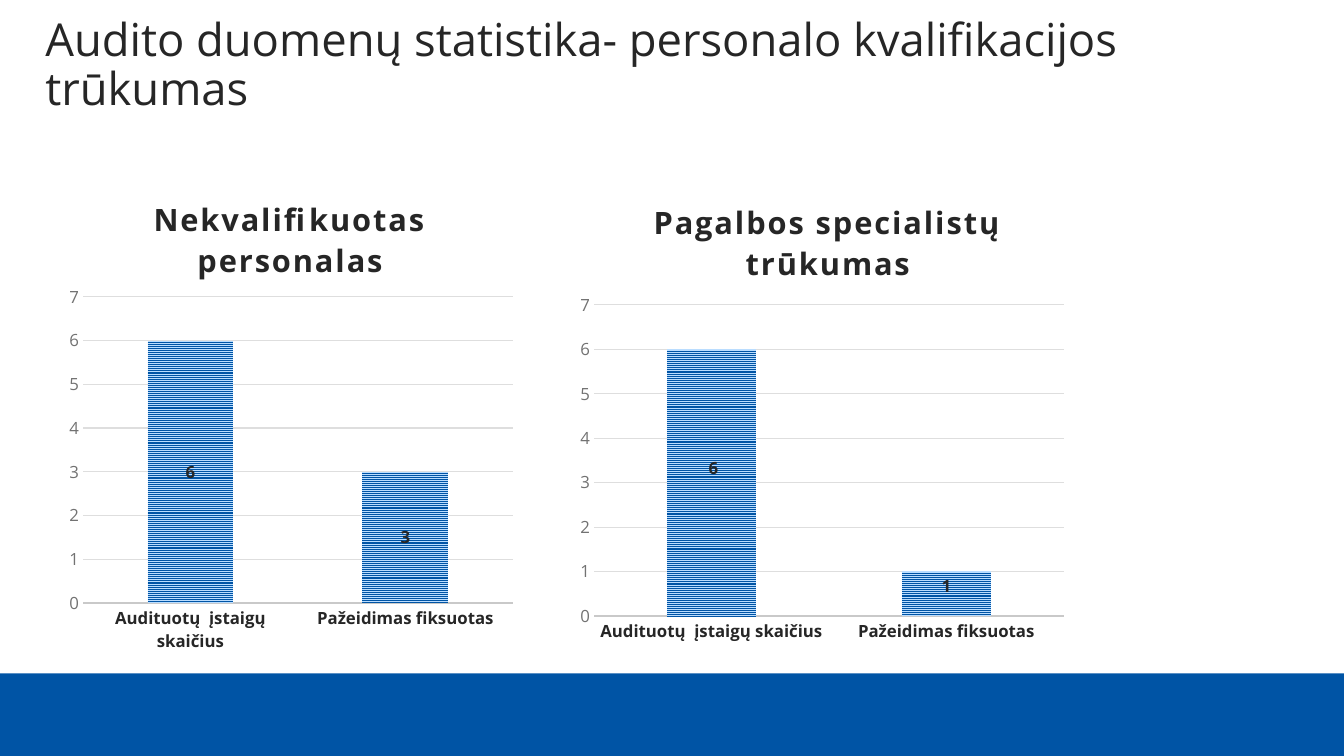
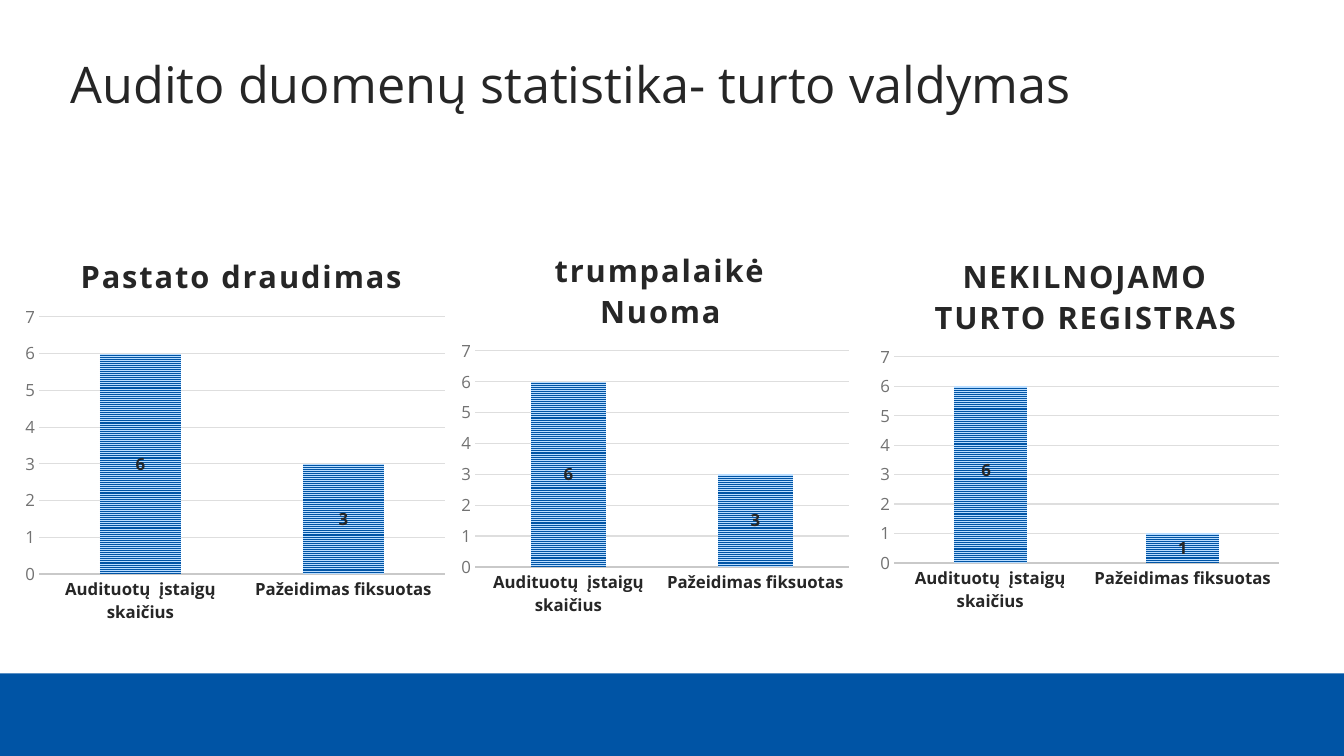
from dataclasses import dataclass

from lxml import etree
from pptx import Presentation
from pptx.chart.data import CategoryChartData
from pptx.dml.color import RGBColor
from pptx.enum.chart import XL_CHART_TYPE, XL_LABEL_POSITION, XL_TICK_MARK
from pptx.enum.dml import MSO_PATTERN
from pptx.enum.shapes import MSO_SHAPE
from pptx.enum.text import MSO_ANCHOR, PP_ALIGN
from pptx.oxml.ns import qn
from pptx.util import Pt

STACKED = XL_CHART_TYPE.COLUMN_STACKED
CLUSTERED = XL_CHART_TYPE.COLUMN_CLUSTERED
NO_TICK = XL_TICK_MARK.NONE
CENTER_LABEL = XL_LABEL_POSITION.CENTER
STRIPES = MSO_PATTERN.NARROW_HORIZONTAL


@dataclass(frozen=True)
class Theme:
    font: str = "Open Sans"
    blue: RGBColor = RGBColor.from_string("0054A5")
    pale_blue: RGBColor = RGBColor.from_string("BADDFF")
    ink: RGBColor = RGBColor.from_string("262626")
    gray: RGBColor = RGBColor.from_string("727272")
    axis_line: RGBColor = RGBColor.from_string("C9C9C9")
    grid_line: RGBColor = RGBColor.from_string("DEDEDE")
    chart_title_size: float = 22
    chart_title_spacing: float = 1.5
    label_size: float = 12
    base_size: float = 10


THEME = Theme()
SLIDE_SIZE = (960, 540)
BAND = (0, 481, 960, 59)
CATEGORIES = ["Audituotų  įstaigų skaičius", "Pažeidimas fiksuotas"]
GAP_AND_OVERLAP = {STACKED: (150, 100), CLUSTERED: (164, -22)}

# Boxes are (left, top, width, height) on the slide, in points.
# Label shifts are (right, down) from the middle of a column, by point index.
SLIDES = [
    {
        "title": "Audito duomenų statistika- personalo kvalifikacijos trūkumas",
        "title_size": 32.4,
        "title_box": (25.2, 21.6, 903.6, 64.1),
        "charts": [
            {"title": "Nekvalifikuotas personalas", "type": STACKED, "values": (6, 3),
             "box": (43.2, 113.8, 329.8, 359.3), "plot": (59.3, 212.1, 307.1, 218.6),
             "title_at": (105.7, 135.7)},
            {"title": "Pagalbos specialistų trūkumas", "type": CLUSTERED, "values": (6, 1),
             "box": (406.8, 120.2, 360, 345.6), "plot": (424.3, 217.9, 335.7, 222.1),
             "title_at": (462.9, 137.9), "label_shifts": {0: (1.4, -10), 1: (0, -5.7)}},
        ],
    },
    {
        "title": "Audito duomenų statistika- turto valdymas",
        "title_size": 36,
        "title_box": (43.2, 21.6, 871.2, 64.1),
        "charts": [
            {"title": "Pastato draudimas", "type": STACKED, "values": (6, 3),
             "box": (12.2, 160.6, 311.8, 291.6), "plot": (27.9, 226.4, 290, 183.6),
             "title_at": (53.6, 176.4)},
            {"title": "trumpalaikė Nuoma", "type": STACKED, "values": (6, 3),
             "box": (324, 155.5, 288.7, 291.6), "plot": (339.3, 250.7, 267.1, 154.3),
             "title_at": (392.1, 172)},
            {"title": "NEKILNOJAMO TURTO REGISTRAS", "type": CLUSTERED, "values": (6, 1),
             "box": (622.8, 160.6, 296.6, 283), "plot": (638.6, 255, 275, 147.1),
             "title_at": (663.6, 176.4), "label_shifts": {0: (-2.9, -2.9)}},
        ],
    },
]


def points(lengths):
    return [Pt(length) for length in lengths]


def style_font(font, size, color=THEME.ink, bold=False):
    font.name = THEME.font
    font.size = Pt(size)
    font.bold = bold
    font.color.rgb = color


def set_layout(parent, index, **settings):
    """Give a chart part a manual layout, as its child at the given index."""
    for old in parent.findall(qn("c:layout")):
        parent.remove(old)
    layout = etree.Element(qn("c:layout"))
    manual = etree.SubElement(layout, qn("c:manualLayout"))
    for name, value in settings.items():
        etree.SubElement(manual, qn(f"c:{name}")).set("val", str(value))
    parent.insert(index, layout)


def fractions(box, frame):
    """Express a slide position or box as shares of the chart frame."""
    left, top, width, height = frame
    shares = [(box[0] - left) / width, (box[1] - top) / height]
    if len(box) == 4:
        shares += [box[2] / width, box[3] / height]
    return dict(zip("xywh", (round(share, 4) for share in shares)))


def style_chart_title(chart, content):
    title = chart.chart_title
    paragraph = title.text_frame.paragraphs[0]
    paragraph.alignment = PP_ALIGN.CENTER
    run = paragraph.add_run()
    run.text = content["title"]
    style_font(run.font, THEME.chart_title_size, bold=True)
    run.font._element.set("spc", str(int(THEME.chart_title_spacing * 100)))
    title.include_in_layout = False
    set_layout(title._element, 1, xMode="edge", yMode="edge",
               **fractions(content["title_at"], content["box"]))


def style_axes(chart):
    for axis in (chart.category_axis, chart.value_axis):
        axis.major_tick_mark = axis.minor_tick_mark = NO_TICK
    category_axis, value_axis = chart.category_axis, chart.value_axis
    style_font(category_axis.tick_labels.font, THEME.label_size, bold=True)
    category_axis.format.line.color.rgb = THEME.axis_line
    category_axis.format.line.width = Pt(1.5)
    style_font(value_axis.tick_labels.font, THEME.label_size, THEME.gray)
    value_axis.minimum_scale, value_axis.maximum_scale, value_axis.major_unit = 0, 7, 1
    value_axis.format.line.fill.background()
    grid_line = value_axis.major_gridlines.format.line
    grid_line.color.rgb = THEME.grid_line
    grid_line.width = Pt(0.75)


def style_columns(chart, content):
    plot = chart.plots[0]
    plot.vary_by_categories = False
    plot.gap_width, plot.overlap = GAP_AND_OVERLAP[content["type"]]
    series = plot.series[0]
    fill = series.format.fill
    fill.patterned()
    fill.pattern = STRIPES
    fill.fore_color.rgb = THEME.blue
    fill.back_color.rgb = THEME.pale_blue
    labels = series.data_labels
    labels.show_value = True
    labels.position = CENTER_LABEL
    style_font(labels.font, THEME.label_size, bold=True)
    for index, (right, down) in content.get("label_shifts", {}).items():
        label = series.points[index].data_label
        label.position = CENTER_LABEL
        style_font(label.font, THEME.label_size, bold=True)
        width, height = content["box"][2:]
        set_layout(labels._element.findall(qn("c:dLbl"))[-1], 1,
                   x=round(right / width, 4), y=round(down / height, 4))


def add_column_chart(slide, content):
    data = CategoryChartData()
    data.categories = CATEGORIES
    data.add_series("Series 1", content["values"])
    chart = slide.shapes.add_chart(content["type"], *points(content["box"]), data).chart
    chart.has_legend = False
    style_font(chart.font, THEME.base_size)
    style_chart_title(chart, content)
    style_axes(chart)
    style_columns(chart, content)
    plot_area = chart._chartSpace.chart.plotArea
    set_layout(plot_area, 0, layoutTarget="inner", xMode="edge", yMode="edge",
               **fractions(content["plot"], content["box"]))


def set_title(slide, content):
    title = slide.shapes.title
    title.left, title.top, title.width, title.height = points(content["title_box"])
    frame = title.text_frame
    frame.word_wrap = True
    frame.vertical_anchor = MSO_ANCHOR.BOTTOM
    paragraph = frame.paragraphs[0]
    paragraph.alignment = PP_ALIGN.LEFT
    paragraph.line_spacing = 0.9
    run = paragraph.add_run()
    run.text = content["title"]
    style_font(run.font, content["title_size"])


def add_master_band(presentation, slide):
    """Draw the band on a slide, then move it to the master that all slides share."""
    band = slide.shapes.add_shape(MSO_SHAPE.RECTANGLE, *points(BAND))
    band.shadow.inherit = False
    band.fill.solid()
    band.fill.fore_color.rgb = THEME.blue
    band.line.fill.background()
    presentation.slide_master.shapes.element.insert(2, band.element)


def main():
    presentation = Presentation()
    presentation.slide_width, presentation.slide_height = points(SLIDE_SIZE)
    title_only = presentation.slide_layouts[5]
    for content in SLIDES:
        slide = presentation.slides.add_slide(title_only)
        set_title(slide, content)
        for chart_content in content["charts"]:
            add_column_chart(slide, chart_content)
    add_master_band(presentation, presentation.slides[0])
    presentation.save("out.pptx")


if __name__ == "__main__":
    main()
